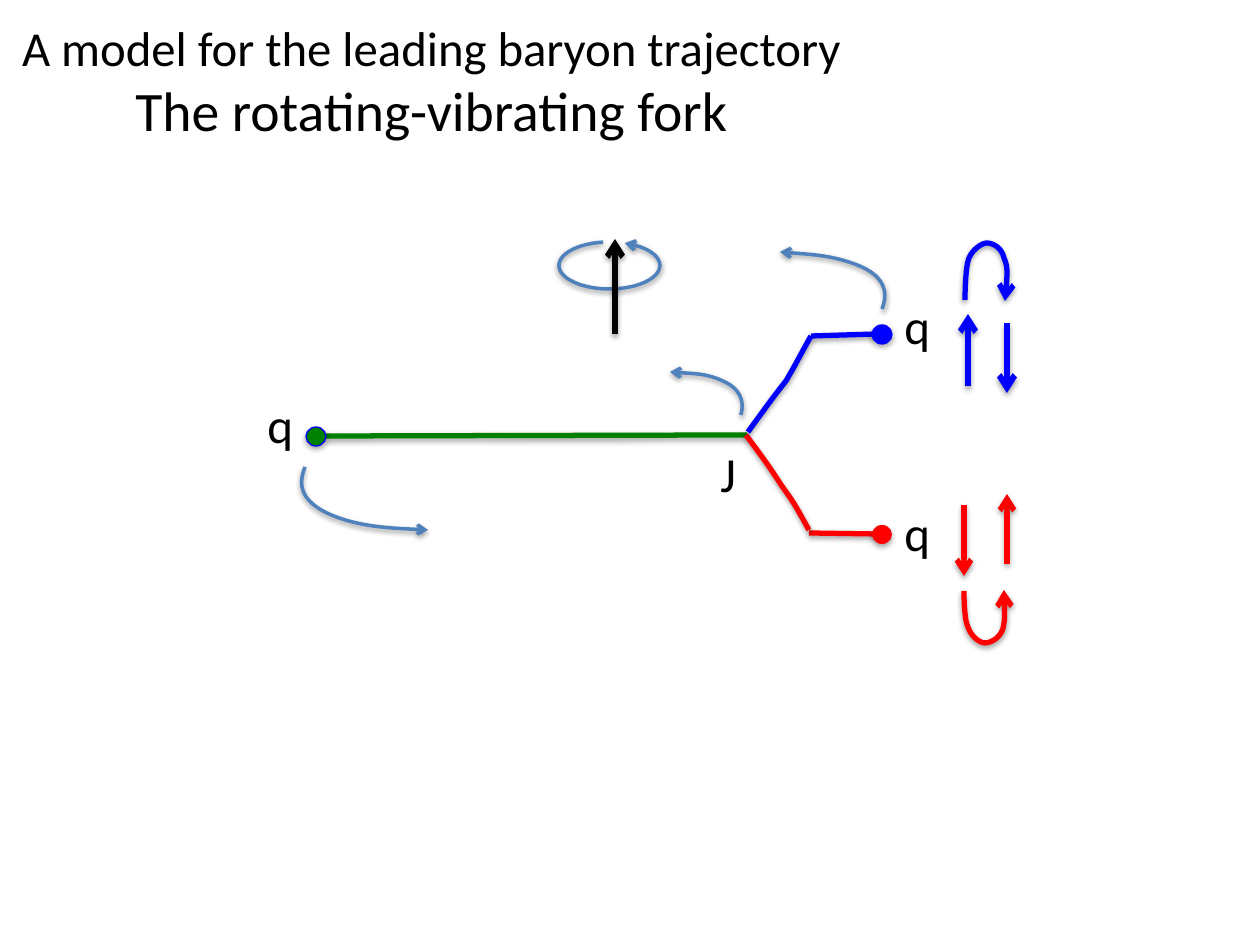
import pptx
import pptx.util
import pptx.dml.color
import pptx.enum.shapes
import pptx.enum.text
import pptx.oxml
import pptx.oxml.ns
from lxml import etree

PX = 914400 // 126
RGB = pptx.dml.color.RGBColor
BLACK = RGB(0x00, 0x00, 0x00)
BLUE = RGB(0x00, 0x00, 0xFF)
RED = RGB(0xFF, 0x00, 0x00)
GREEN = RGB(0x00, 0x80, 0x00)
STEEL = RGB(0x4F, 0x81, 0xBD)
FONT = "Calibri"
SHAPES = pptx.enum.shapes.MSO_SHAPE
qn = pptx.oxml.ns.qn


def place(box, *points):
    """Turn px points inside a box into slide positions in EMU."""
    return [((box[0] + x) * PX, (box[1] + y) * PX) for x, y in points]


def add_shadow(shape, alpha):
    for old in shape._element.spPr.findall(qn("a:effectLst")):
        shape._element.spPr.remove(old)
    shape._element.spPr.append(pptx.oxml.parse_xml(
        f'<a:effectLst {pptx.oxml.ns.nsdecls("a")}>'
        '<a:outerShdw blurRad="40000" dist="20000" dir="5400000" rotWithShape="0">'
        f'<a:srgbClr val="000000"><a:alpha val="{alpha * 1000}"/></a:srgbClr>'
        '</a:outerShdw></a:effectLst>'))


def style_stroke(shape, color, width, arrow=None):
    """Set line and shadow; arrow is None, "headEnd" or "tailEnd"."""
    shape.line.color.rgb = color
    shape.line.width = pptx.util.Pt(width)
    if arrow:
        etree.SubElement(shape.line._get_or_add_ln(), qn("a:" + arrow), type="arrow")
    add_shadow(shape, 38)


def add_line(page, box, start, end, color, width=3, arrow=None):
    (x1, y1), (x2, y2) = place(box, start, end)
    line = page.shapes.add_connector(
        pptx.enum.shapes.MSO_CONNECTOR.STRAIGHT, x1, y1, x2, y2)
    style_stroke(line, color, width, arrow)


def add_curve(page, box, points, color, width=3, arrow=None):
    """Draw a chain of cubic curves: a start, then three points for each."""
    start, *rest = place(box, *points)
    builder = page.shapes.build_freeform(*start)
    builder.add_line_segments(rest, close=False)
    curve = builder.convert_to_shape()
    outline = next(curve._element.iter(qn("a:path")))
    segments = outline.findall(qn("a:lnTo"))
    for first in range(0, len(segments), 3):
        bezier = etree.SubElement(outline, qn("a:cubicBezTo"))
        for segment in segments[first:first + 3]:
            bezier.append(segment[0])
            outline.remove(segment)
    curve.fill.background()
    style_stroke(curve, color, width, arrow)


def add_ball(page, box, corner, color, edge=None):
    (left, top), = place(box, corner)
    ball = page.shapes.add_shape(SHAPES.OVAL, left, top, 20 * PX, 19 * PX)
    ball.fill.solid()
    ball.fill.fore_color.rgb = color
    if edge:
        ball.line.color.rgb = edge
        ball.line.width = pptx.util.Pt(0.75)
    else:
        ball.line.fill.background()
    add_shadow(ball, 35)


def add_label(page, box, corner, text, width=52):
    (left, top), = place(box, corner)
    label = page.shapes.add_textbox(left, top, width * PX, 72 * PX)
    label.text_frame.word_wrap = False
    para = label.text_frame.paragraphs[0]
    para.text = text
    para.font.name = FONT
    para.font.size = pptx.util.Pt(28)
    para.font.color.rgb = BLACK


def draw_title(page, box):
    title = page.shapes.title
    title.left, title.top, title.width, title.height = (side * PX for side in box)
    frame = title.text_frame
    frame.word_wrap = True
    frame.auto_size = pptx.enum.text.MSO_AUTO_SIZE.NONE
    frame.vertical_anchor = pptx.enum.text.MSO_ANCHOR.MIDDLE
    frame.margin_right = 27 * PX
    para = frame.paragraphs[0]
    para.alignment = pptx.enum.text.PP_ALIGN.CENTER
    para.font.name = FONT
    para.font.color.rgb = BLACK
    lines = [("A model for the leading baryon trajectory", 27.9),
             ("The rotating-vibrating fork", 31.8)]
    for number, (text, size) in enumerate(lines):
        if number:
            para.add_line_break()
        span = para.add_run()
        span.text = text
        span.font.size = pptx.util.Pt(size)


def draw_fork(page, box):
    # Handle and the straight ends of the prongs
    add_line(page, box, (556, 47), (622, 45), BLUE)
    add_line(page, box, (554, 244), (621, 245), RED)
    add_line(page, box, (71, 147), (492, 146), GREEN)
    # Quarks
    add_ball(page, box, (617, 236), RED)
    add_ball(page, box, (617, 36), BLUE, BLUE)
    add_ball(page, box, (51, 138), GREEN, BLUE)
    # Bent prongs
    add_curve(page, box, [(491, 146), (515, 178), (517, 182), (527, 197),
                          (539, 214), (538, 212), (554, 241)], RED)
    add_curve(page, box, [(493, 143), (517, 110), (520, 106), (531, 92),
                          (541, 75), (540, 76), (556, 47)], BLUE)
    # Quark and junction labels
    for corner in [(0, 99), (637, 0), (637, 207)]:
        add_label(page, box, corner, "q")
    add_label(page, box, (453, 148), "J", 42)


def draw_vibration(page, box):
    straight = [((13, 147), (13, 75), BLUE, 3.25), ((52, 84), (52, 154), BLUE, 3.25),
                ((9, 266), (9, 337), RED, 3), ((52, 325), (52, 255), RED, 3)]
    for start, tip, color, width in straight:
        add_line(page, box, start, tip, color, width, "tailEnd")
    # Turning arrows above and below
    add_curve(page, box, [(10, 61), (10, 61), (10, 29), (14, 19), (18, 10), (27, 4),
                          (32, 4), (38, 4), (47, 9), (49, 19), (53, 28), (52, 46),
                          (50, 62)], BLUE, arrow="tailEnd")
    add_curve(page, box, [(9, 352), (9, 352), (9, 381), (13, 388), (16, 397), (24, 404),
                          (30, 404), (36, 404), (45, 399), (48, 390), (50, 381),
                          (50, 365), (49, 351)], RED, arrow="tailEnd")


def draw_rotation(page, box):
    # Sweeps of the upper quark, the lone quark and the junction
    sweeps = [
        [(587, 70), (591, 60), (595, 41), (567, 28), (540, 16), (485, 13), (485, 13)],
        [(10, 228), (5, 241), (1, 260), (34, 275), (65, 289), (133, 291), (133, 291)],
        [(446, 176), (448, 168), (450, 154), (432, 144), (413, 134), (375, 133), (375, 133)],
    ]
    for points in sweeps:
        add_curve(page, box, points, STEEL, 2, "tailEnd")
    # Turn around the axis; one degree is 0.6 adjustment units
    (left, top), = place(box, (264, 3))
    turn = page.shapes.add_shape(SHAPES.ARC, left, top, 101 * PX, 47 * PX)
    turn.adjustments[0] = 304.5 * 0.6
    turn.adjustments[1] = 254.7 * 0.6
    turn.fill.background()
    style_stroke(turn, STEEL, 2, "headEnd")
    add_line(page, box, (320, 95), (320, 0), BLACK, 3.25, "tailEnd")


def main():
    deck = pptx.Presentation()
    deck.slide_width = pptx.util.Inches(10)
    deck.slide_height = pptx.util.Inches(7.5)
    page = deck.slides.add_slide(deck.slide_layouts[5])
    draw_title(page, (-15, -14, 907, 188))
    draw_fork(page, (255, 289))
    draw_vibration(page, (955, 239))
    draw_rotation(page, (295, 239))
    deck.save("out.pptx")


if __name__ == "__main__":
    main()
